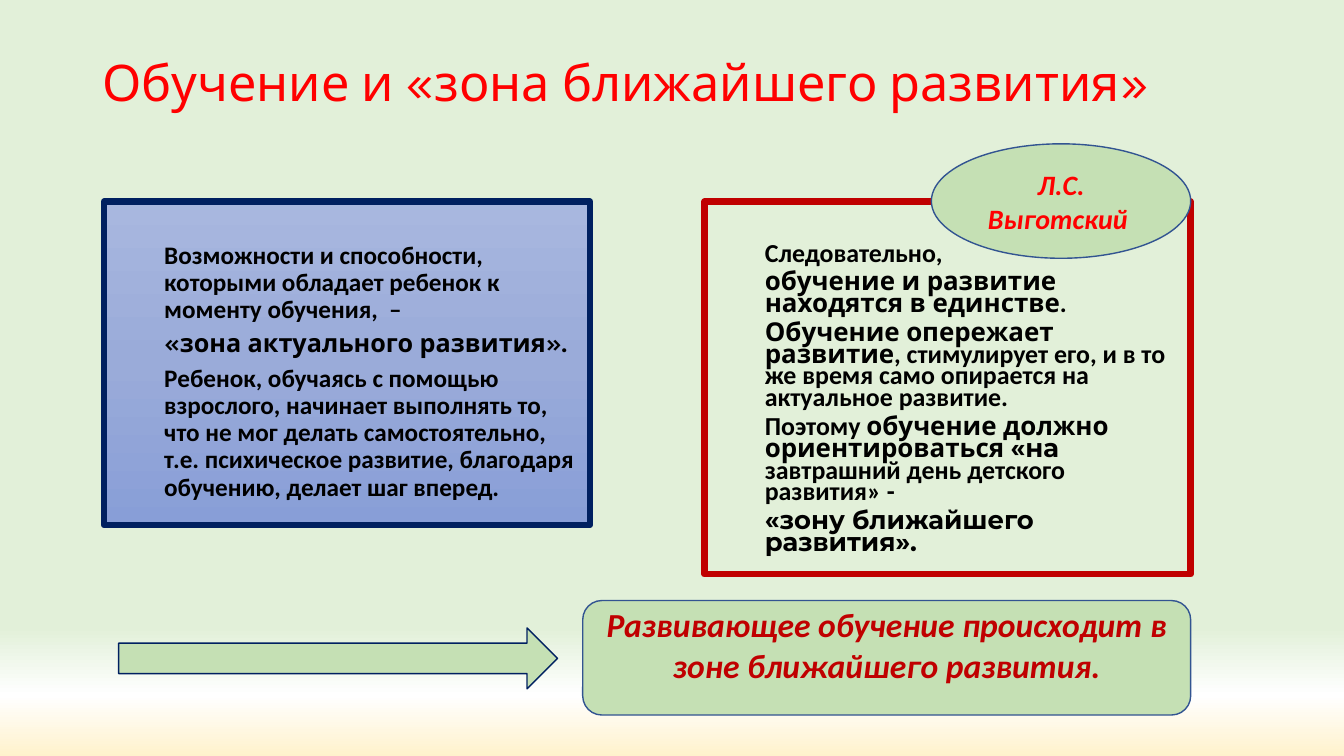
from lxml.etree import SubElement
from pptx import Presentation
from pptx.dml.color import RGBColor as Rgb
from pptx.enum.shapes import MSO_SHAPE as Shape
from pptx.enum.text import MSO_ANCHOR as Anchor, PP_ALIGN as Align
from pptx.oxml.ns import qn
from pptx.util import Pt

PX = 9525
COLORS = {
    "title": "FF0000", "text": "000000", "accent": "C00000", "navy": "002060",
    "outline": "325491", "leaf": "C5E0B4",
}
BACKDROP = [(83, "E2F0D9"), (92, "FFFFFF"), (100, "FFF2CC")]
BLUES = [(0, "A8B7DF"), (50, "9AABD9"), (100, "889ED7")]
BODY, HEAD, STRONG = "Calibri", "Karla", "Montserrat"

ACTUAL_ZONE = [
    [("Возможности и способности, которыми обладает ребенок к моменту обучения,  –", BODY)],
    [("«зона актуального развития».", HEAD)],
    [("Ребенок, обучаясь с помощью взрослого, начинает выполнять то, что не мог делать "
      "самостоятельно, т.е. психическое развитие, благодаря обучению, делает шаг вперед.", BODY)],
]
NEAREST_ZONE = [
    [("Следовательно,", BODY)],
    [("обучение и развитие находятся в единстве", HEAD), (".", BODY)],
    [("Обучение опережает развитие", HEAD),
     (", стимулирует его, и в то же время само опирается на актуальное развитие.", BODY)],
    [("Поэтому ", BODY), ("обучение должно ориентироваться ", HEAD), ("«на ", STRONG),
     ("завтрашний день детского развития» -", BODY)],
    [("«зону ближайшего развития».", STRONG)],
]


def box(left, top, width, height):
    """Turn a pixel box into EMU lengths."""
    return [value * PX for value in (left, top, width, height)]


def paint_gradient(fill, owner, stops):
    """Fill with a gradient running from top to bottom."""
    fill.gradient()
    fill.gradient_angle = 270
    stop_list = owner.find(".//" + qn("a:gsLst"))
    for old in list(stop_list):
        stop_list.remove(old)
    for percent, color in stops:
        stop = SubElement(stop_list, qn("a:gs"), pos=str(percent * 1000))
        SubElement(stop, qn("a:srgbClr"), val=color)


def add_figure(slide, kind, place, line, weight):
    """Add a preset shape with an outline and no shadow."""
    figure = slide.shapes.add_shape(kind, *box(*place))
    figure.shadow.inherit = False
    figure.line.color.rgb = Rgb.from_string(COLORS[line])
    figure.line.width = Pt(weight)
    return figure


def add_run(paragraph, words, font, size, color, bold=False, italic=False):
    """Append one formatted run."""
    run = paragraph.add_run()
    run.text = words
    run.font.name = font
    run.font.size = Pt(size)
    run.font.bold = bold
    run.font.italic = italic
    run.font.color.rgb = Rgb.from_string(COLORS[color])


def add_title(slide, words):
    """Add the slide heading."""
    frame = slide.shapes.add_textbox(*box(88, 38, 1104, 86)).text_frame
    frame.word_wrap = True
    frame.vertical_anchor = Anchor.MIDDLE
    heading = frame.paragraphs[0]
    heading.line_spacing = 0.9
    add_run(heading, words, HEAD, 36, "title")


def add_panel(slide, place, line, statements, size, spacing, inset):
    """Add a framed panel of indented statements."""
    panel = add_figure(slide, Shape.RECTANGLE, place, line, 4.5)
    panel.fill.background()
    frame = panel.text_frame
    frame.word_wrap = True
    frame.vertical_anchor = Anchor.TOP
    frame.margin_top = inset * PX
    for index, statement in enumerate(statements):
        paragraph = frame.add_paragraph() if index else frame.paragraphs[0]
        paragraph.alignment = Align.LEFT
        paragraph.line_spacing = spacing
        paragraph.space_before = Pt(5 if index else 0)
        paragraph._p.get_or_add_pPr().set("marL", str(48 * PX))
        for words, font in statement:
            add_run(paragraph, words, font, size, "text", bold=True)
    return panel


def add_leaf(slide, kind, place, line):
    """Add a light green shape with a thin outline."""
    leaf = add_figure(slide, kind, place, line, 1)
    leaf.fill.solid()
    leaf.fill.fore_color.rgb = Rgb.from_string(COLORS["leaf"])
    return leaf


def add_caption(leaf, words, size, color):
    """Write a centred bold italic caption in a shape."""
    frame = leaf.text_frame
    frame.word_wrap = True
    frame.vertical_anchor = Anchor.MIDDLE
    frame.paragraphs[0].alignment = Align.CENTER
    add_run(frame.paragraphs[0], words, BODY, size, color, bold=True, italic=True)


def main():
    """Build the slide and save it."""
    deck = Presentation()
    deck.slide_width, deck.slide_height = 1280 * PX, 720 * PX
    slide = deck.slides.add_slide(deck.slide_layouts[6])
    paint_gradient(slide.background.fill, slide._element, BACKDROP)

    add_title(slide, "Обучение и «зона ближайшего развития»")
    actual = add_panel(slide, (99, 192, 463, 308), "navy", ACTUAL_ZONE, 18, 0.9, 39)
    paint_gradient(actual.fill, actual._element, BLUES)
    add_panel(slide, (671, 192, 463, 355), "accent", NEAREST_ZONE, 18.5, 0.7, 41)

    author = add_leaf(slide, Shape.OVAL, (887, 137, 247, 109), "outline")
    add_caption(author, "Л.С. Выготский ", 20, "title")
    add_leaf(slide, Shape.RIGHT_ARROW, (113, 598, 418, 58), "navy")
    conclusion = add_leaf(slide, Shape.ROUNDED_RECTANGLE, (555, 572, 579, 109), "outline")
    add_caption(conclusion, "Развивающее обучение происходит в зоне ближайшего развития.", 24, "accent")
    conclusion.text_frame.margin_top = 0
    conclusion.text_frame.margin_bottom = 25 * PX

    deck.save("out.pptx")


if __name__ == "__main__":
    main()
